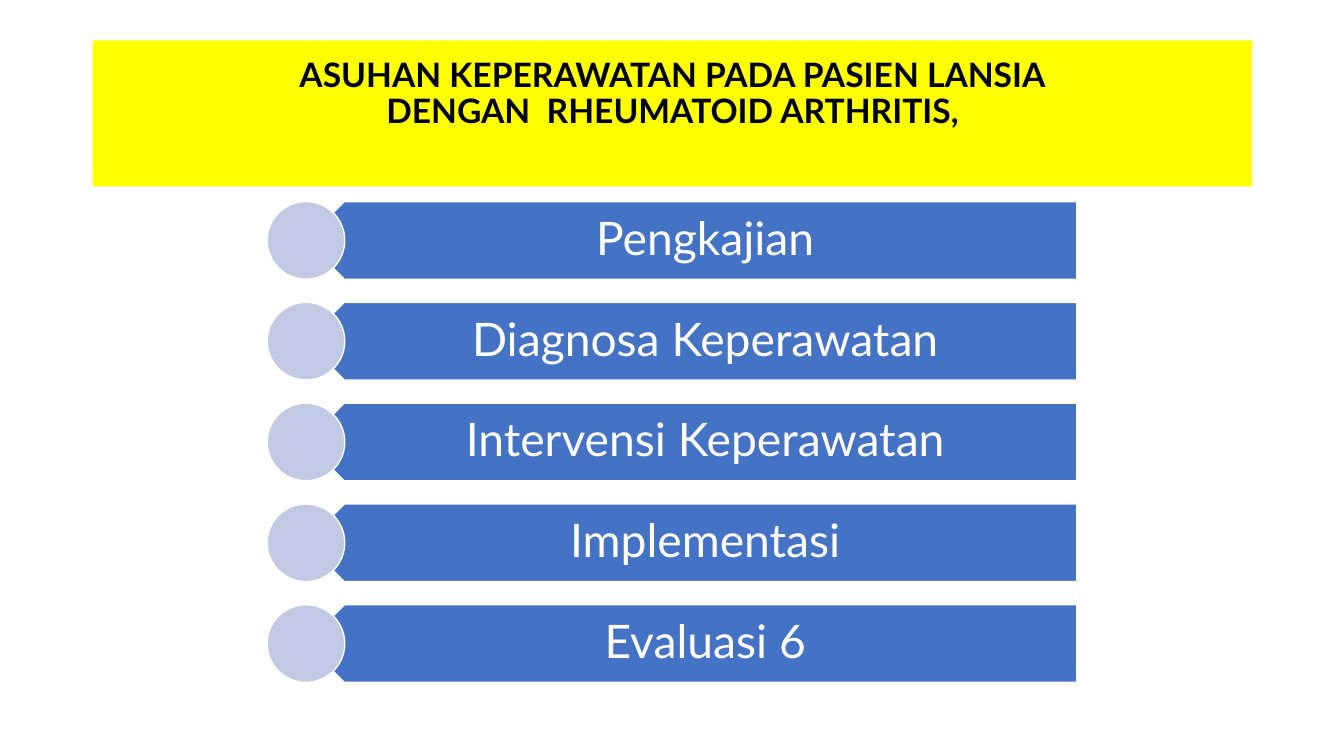
from pptx import Presentation
from pptx.dml.color import RGBColor
from pptx.enum.shapes import MSO_SHAPE
from pptx.enum.text import MSO_ANCHOR, PP_ALIGN
from pptx.util import Inches, Pt

RECT, PENTAGON, OVAL = MSO_SHAPE.RECTANGLE, MSO_SHAPE.PENTAGON, MSO_SHAPE.OVAL
TOP, MIDDLE, CENTER = MSO_ANCHOR.TOP, MSO_ANCHOR.MIDDLE, PP_ALIGN.CENTER

COLORS = {
    "banner": "FFFF00",
    "bar": "4472C4",
    "dot": "C1C9E4",
    "light": "FFFFFF",
    "dark": "000000",
}
FONT = "Lato"

TITLE = "ASUHAN KEPERAWATAN PADA PASIEN LANSIA\nDENGAN  RHEUMATOID ARTHRITIS,"
STEPS = [
    "Pengkajian",
    "Diagnosa Keperawatan",
    "Intervensi Keperawatan",
    "Implementasi",
    "Evaluasi 6",
]

# Grid of steps, in inches
FIRST_ROW, ROW_PITCH, ROW_HEIGHT = 2.0, 1.0, 0.77
DOT_LEFT, BAR_LEFT, LABEL_LEFT, STEPS_RIGHT = 2.65, 3.03, 3.23, 10.68


def rgb(name):
    return RGBColor.from_string(COLORS[name])


def add_block(slide, kind, box, fill, line=None):
    sp = slide.shapes.add_shape(kind, *map(Inches, box))
    sp.shadow.inherit = False
    sp.fill.solid()
    sp.fill.fore_color.rgb = rgb(fill)
    if line:
        sp.line.color.rgb = rgb(line)
        sp.line.width = Pt(1)
    else:
        sp.line.fill.background()
    return sp


def set_text(sp, text, size, color, insets, anchor=MIDDLE, bold=False):
    tf = sp.text_frame
    tf.word_wrap = True
    tf.vertical_anchor = anchor
    tf.margin_left, tf.margin_top, tf.margin_right, tf.margin_bottom = map(Inches, insets)
    p = tf.paragraphs[0]
    p.text = text
    p.alignment = CENTER
    p.line_spacing = 0.9
    p.font.name = FONT
    p.font.size = Pt(size)
    p.font.bold = bold
    p.font.color.rgb = rgb(color)


def add_title(slide):
    sp = add_block(slide, RECT, (0.92, 0.4, 11.5, 1.45), "banner")
    set_text(sp, TITLE, 24, "dark", (0.1, 0.18, 0.1, 0.05), anchor=TOP, bold=True)


def add_step(slide, row, text):
    top = FIRST_ROW + row * ROW_PITCH
    # Bar pointing left
    bar = add_block(slide, PENTAGON, (BAR_LEFT, top, STEPS_RIGHT - BAR_LEFT, ROW_HEIGHT),
                    "bar", "light")
    bar.rotation = 180
    # Upright label over the bar
    label_box = (LABEL_LEFT, top, STEPS_RIGHT - LABEL_LEFT, ROW_HEIGHT)
    label = slide.shapes.add_textbox(*map(Inches, label_box))
    set_text(label, text, 33, "light", (0.34, 0.14, 0.26, 0.14))
    # Dot covering the tip
    add_block(slide, OVAL, (DOT_LEFT, top, ROW_HEIGHT, ROW_HEIGHT), "dot", "light")


def main():
    prs = Presentation()
    prs.slide_width, prs.slide_height = Inches(13.33), Inches(7.5)
    slide = prs.slides.add_slide(prs.slide_layouts[6])
    for row, text in enumerate(STEPS):
        add_step(slide, row, text)
    add_title(slide)
    prs.save("out.pptx")


if __name__ == "__main__":
    main()
